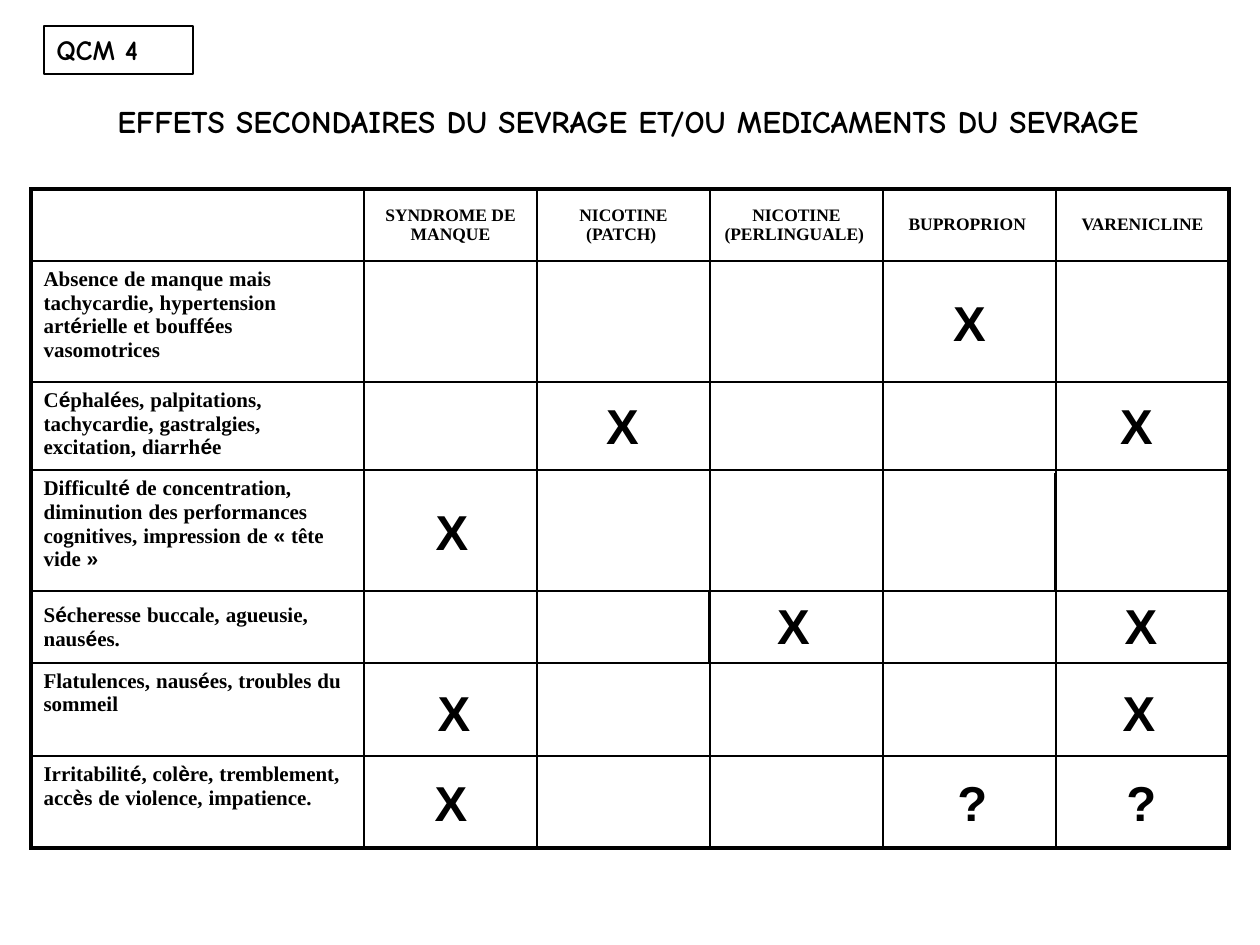
"""Build the slide on side effects of withdrawal and of its medicines."""
from itertools import groupby

from lxml import etree
from pptx import Presentation
from pptx.dml.color import RGBColor
from pptx.enum.shapes import MSO_CONNECTOR, MSO_SHAPE
from pptx.enum.text import MSO_ANCHOR, PP_ALIGN
from pptx.oxml.ns import qn
from pptx.util import Pt

LEFT, CENTER = PP_ALIGN.LEFT, PP_ALIGN.CENTER
TOP, MIDDLE = MSO_ANCHOR.TOP, MSO_ANCHOR.MIDDLE
STRAIGHT, RECT = MSO_CONNECTOR.STRAIGHT, MSO_SHAPE.RECTANGLE
COLORS = {"ink": "000000", "paper": "FFFFFF"}
INK = RGBColor.from_string(COLORS["ink"])
PAPER = RGBColor.from_string(COLORS["paper"])
PX = 914400 / 126


def px(*lengths):
    return [round(n * PX) for n in lengths]


def write(tf, text, size, font, align=LEFT, accent_font=None):
    p = tf.paragraphs[0]
    p.alignment = align
    p.font.size, p.font.bold = Pt(size), True
    p.font.color.rgb = INK
    if accent_font is None:
        p.font.name = font
    for accented, chars in groupby(text, lambda c: bool(accent_font) and c in "éè«» "):
        r = p.add_run()
        r.text = "".join(chars)
        if accent_font:
            r.font.name = accent_font if accented else font


prs = Presentation()
prs.slide_width, prs.slide_height = px(1260, 945)
s = prs.slides.add_slide(prs.slide_layouts[6])

title = s.shapes.add_textbox(*px(-2, 96, 1260, 73))
title.text_frame.word_wrap = True
write(title.text_frame, "EFFETS SECONDAIRES DU SEVRAGE ET/OU MEDICAMENTS DU SEVRAGE",
      18, "Comic Neue", CENTER)

headers = ["SYNDROME DE MANQUE", "NICOTINE (PATCH) ", "NICOTINE (PERLINGUALE) ",
           "BUPROPRION ", "VARENICLINE"]
effects = [
    "Absence de manque mais tachycardie, hypertension artérielle et bouffées vasomotrices",
    "Céphalées, palpitations, tachycardie, gastralgies, excitation, diarrhée",
    "Difficulté de concentration, diminution des performances cognitives, "
    "impression de « tête vide »",
    "Sécheresse buccale, agueusie, nausées.",
    "Flatulences, nausées, troubles du sommeil",
    "Irritabilité, colère, tremblement, accès de violence, impatience.",
]
widths = [333] + [173] * 5
heights = [72, 121, 88, 121, 72, 93, 92]
rows, cols = len(heights), len(widths)
table = s.shapes.add_table(rows, cols, *px(31, 189, sum(widths), sum(heights))).table
table.first_row = table.horz_banding = False
for column, width in zip(table.columns, px(*widths)):
    column.width = width
for row, height in zip(table.rows, px(*heights)):
    row.height = height

for i in range(rows):
    for j in range(cols):
        cell = table.cell(i, j)
        tcPr = cell._tc.get_or_add_tcPr()
        edges = {"lnL": j == 0, "lnR": j == cols - 1, "lnT": i == 0, "lnB": i == rows - 1}
        for tag, outer in edges.items():
            ln = etree.SubElement(tcPr, qn("a:" + tag), w=str(Pt(2.25 if outer else 1)))
            fill = etree.SubElement(ln, qn("a:solidFill"))
            etree.SubElement(fill, qn("a:srgbClr"), val=COLORS["ink"])
        cell.fill.solid()
        cell.fill.fore_color.rgb = PAPER
        if i == 0 and j > 0:
            cell.vertical_anchor = MIDDLE
            write(cell.text_frame, headers[j - 1], 10, "Times New Roman", CENTER)
        elif i > 0 and j == 0:
            cell.vertical_anchor = MIDDLE if i == 4 else TOP
            write(cell.text_frame, effects[i - 1], 12, "Times New Roman", LEFT, "Arial")

marks = [
    ("X", 888, 265, 163, 113), ("X", 541, 383, 163, 84), ("X", 368, 473, 168, 116),
    ("X", 709, 591, 169, 68), ("X", 372, 670, 164, 83), ("X", 372, 760, 158, 84),
    ("?", 945, 766, 55, 72), ("X", 1057, 591, 168, 68), ("X", 1057, 670, 164, 83),
    ("?", 1114, 766, 55, 72), ("X", 1055, 383, 163, 84),
]
for mark, *box in marks:
    sp = s.shapes.add_textbox(*px(*box))
    tf = sp.text_frame
    tf.word_wrap = False
    tf.vertical_anchor = MIDDLE if mark == "X" else TOP
    write(tf, mark, 28, "Arial", CENTER if mark == "X" else LEFT)

for ends in [(1057, 591, 1226, 591), (709, 591, 709, 662),
             (709, 591, 888, 591), (1055, 473, 1055, 591)]:
    line = s.shapes.add_connector(STRAIGHT, *px(*ends))
    line.line.color.rgb = INK
    line.line.width = Pt(0.75)
    etree.SubElement(line._element.spPr, qn("a:effectLst"))

label = s.shapes.add_shape(RECT, *px(44, 26, 149, 48))
label.shadow.inherit = False
label.fill.background()
label.line.color.rgb = INK
label.line.width = Pt(1)
label.text_frame.vertical_anchor = TOP
write(label.text_frame, "QCM 4", 16, "Comic Neue")

prs.save("out.pptx")
